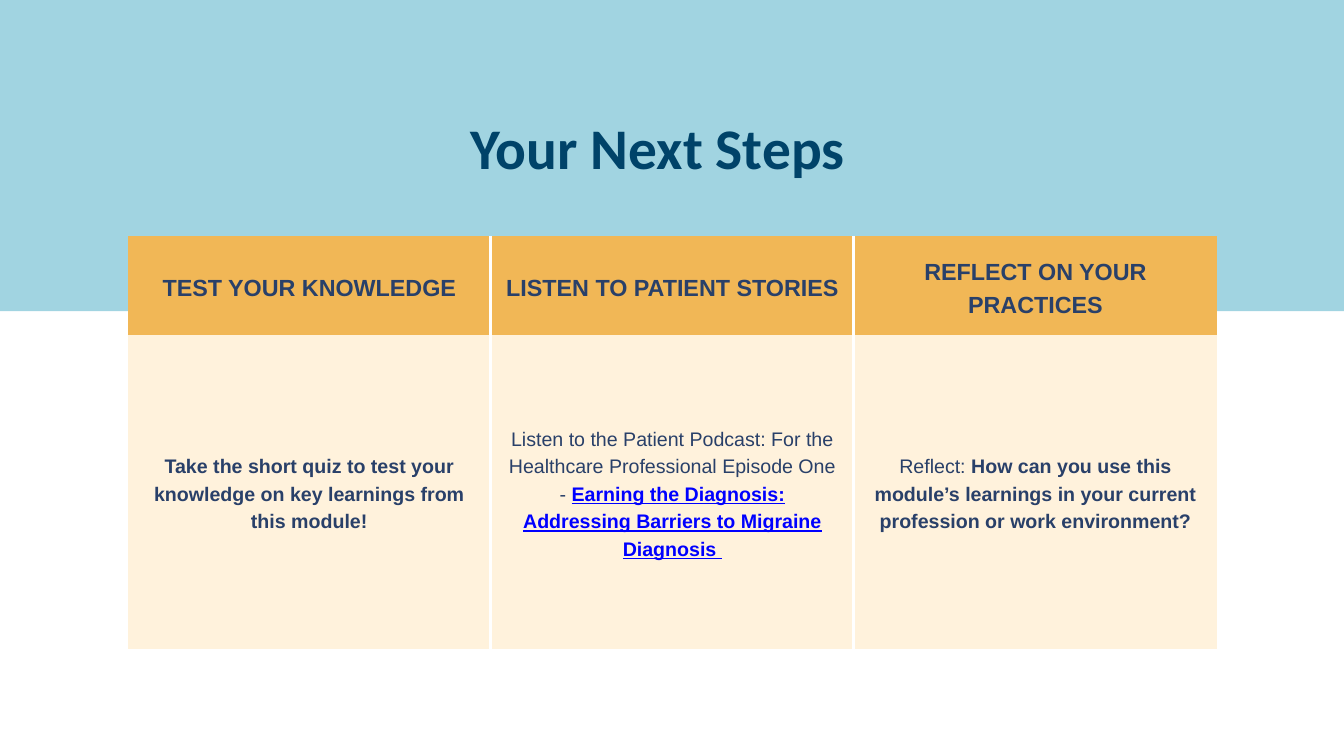
"""Build the "Your Next Steps" slide."""
from dataclasses import dataclass
from typing import Any

from lxml.etree import SubElement
from pptx import Presentation
from pptx.dml.color import RGBColor
from pptx.enum.shapes import MSO_SHAPE
from pptx.enum.text import MSO_ANCHOR, MSO_AUTO_SIZE, PP_ALIGN
from pptx.oxml.ns import qn
from pptx.slide import Slide
from pptx.table import _Cell
from pptx.util import Inches, Pt


@dataclass(frozen=True)
class Theme:
    """Colours, fonts, type sizes and line spacings in points."""

    band: str = "A1D4E1"
    title: str = "004369"
    text: str = "294069"
    link: str = "0000FF"
    header_fill: str = "F1B756"
    body_fill: str = "FFF2DC"
    divider: str = "FFFFFF"
    title_font: str = "Calibri"
    table_font: str = "Arial"
    title_size: float = 61.5
    header_size: float = 25
    body_size: float = 21
    title_spacing: float = 86.2
    header_spacing: float = 35
    body_spacing: float = 29.4
    divider_width: float = 3.75


@dataclass(frozen=True)
class Phrase:
    """A stretch of text with one emphasis."""

    text: str
    bold: bool = True
    link: bool = False


@dataclass(frozen=True)
class Step:
    """One column of the table."""

    heading: str
    body: tuple[Phrase, ...]


THEME = Theme()
STEPS = (
    Step(
        "TEST YOUR KNOWLEDGE",
        (Phrase("Take the short quiz to test your knowledge on key learnings from this module!"),),
    ),
    Step(
        "LISTEN TO PATIENT STORIES",
        (
            Phrase("Listen to the Patient Podcast: For the Healthcare Professional Episode One - ", bold=False),
            Phrase("Earning the Diagnosis: Addressing Barriers to Migraine Diagnosis ", link=True),
        ),
    ),
    Step(
        "REFLECT ON YOUR PRACTICES",
        (
            Phrase("Reflect: ", bold=False),
            Phrase("How can you use this module’s learnings in your current profession or work environment?"),
        ),
    ),
)


def apply_format(target: Any, values: dict[str, Any]) -> None:
    """Set each named attribute on the target."""
    for name, value in values.items():
        setattr(target, name, value)


def write_phrases(
    text_frame: Any, phrases: tuple[Phrase, ...], font: str, size: float, spacing: float, color: str
) -> None:
    """Fill the first paragraph with centred phrases."""
    paragraph = text_frame.paragraphs[0]
    apply_format(paragraph, {"alignment": PP_ALIGN.CENTER, "line_spacing": Pt(spacing), "space_before": Pt(0)})
    for phrase in phrases:
        run = paragraph.add_run()
        run.text = phrase.text
        values = {"name": font, "size": Pt(size), "bold": phrase.bold, "underline": phrase.link}
        apply_format(run.font, values)
        run.font.color.rgb = RGBColor.from_string(THEME.link if phrase.link else color)


def set_borders(cell: _Cell, left: bool, right: bool) -> None:
    """Draw the column dividers and clear the other cell edges."""
    properties = cell._tc.get_or_add_tcPr()
    edges = {"a:lnL": left, "a:lnR": right, "a:lnT": False, "a:lnB": False}
    for index, (tag, visible) in enumerate(edges.items()):
        line = SubElement(properties, qn(tag), w=str(Pt(THEME.divider_width) if visible else 0))
        if visible:
            fill = SubElement(line, qn("a:solidFill"))
            SubElement(fill, qn("a:srgbClr"), val=THEME.divider)
        else:
            SubElement(line, qn("a:noFill"))
        properties.insert(index, line)


def draw_title(slide: Slide, text: str) -> None:
    """Place the slide title over the coloured band."""
    title = slide.shapes.title
    position = {"left": Inches(2.3), "top": Inches(1.5), "width": Inches(14.98), "height": Inches(1.15)}
    apply_format(title, position)
    margins = dict.fromkeys(("margin_left", "margin_top", "margin_right", "margin_bottom"), 0)
    frame_values = {"word_wrap": True, "auto_size": MSO_AUTO_SIZE.NONE, "vertical_anchor": MSO_ANCHOR.TOP}
    apply_format(title.text_frame, margins | frame_values)
    write_phrases(
        title.text_frame, (Phrase(text),), THEME.title_font, THEME.title_size, THEME.title_spacing, THEME.title
    )


def draw_band(slide: Slide) -> None:
    """Draw the coloured band behind the title."""
    band = slide.shapes.add_shape(MSO_SHAPE.RECTANGLE, 0, 0, Inches(20), Inches(4.63))
    band.shadow.inherit = False
    band.fill.solid()
    band.fill.fore_color.rgb = RGBColor.from_string(THEME.band)
    band.line.fill.background()
    slide.shapes.title.element.addprevious(band.element)


def draw_steps(slide: Slide, steps: tuple[Step, ...]) -> None:
    """Draw the table with one column for each step."""
    row_heights = (1.47, 4.68)
    frame = slide.shapes.add_table(
        len(row_heights), len(steps), Inches(1.9), Inches(3.51), Inches(16.21), Inches(sum(row_heights))
    )
    table = frame.table
    apply_format(table, {"first_row": False, "horz_banding": False})
    for row, height in zip(table.rows, row_heights):
        row.height = Inches(height)
    margins = dict.fromkeys(("margin_left", "margin_top", "margin_right", "margin_bottom"), Inches(0.21))
    for column, step in enumerate(steps):
        contents = (
            ((Phrase(step.heading),), THEME.header_size, THEME.header_spacing, THEME.header_fill),
            (step.body, THEME.body_size, THEME.body_spacing, THEME.body_fill),
        )
        for row, (phrases, size, spacing, fill) in enumerate(contents):
            cell = table.cell(row, column)
            apply_format(cell, margins | {"vertical_anchor": MSO_ANCHOR.MIDDLE})
            cell.fill.solid()
            cell.fill.fore_color.rgb = RGBColor.from_string(fill)
            set_borders(cell, left=column > 0, right=column < len(steps) - 1)
            write_phrases(cell.text_frame, phrases, THEME.table_font, size, spacing, THEME.text)


def main() -> None:
    """Build and save the presentation."""
    presentation = Presentation()
    apply_format(presentation, {"slide_width": Inches(20), "slide_height": Inches(11.25)})
    slide = presentation.slides.add_slide(presentation.slide_layouts[5])
    draw_band(slide)
    draw_steps(slide, STEPS)
    draw_title(slide, "Your Next Steps")
    presentation.save("out.pptx")


if __name__ == "__main__":
    main()
